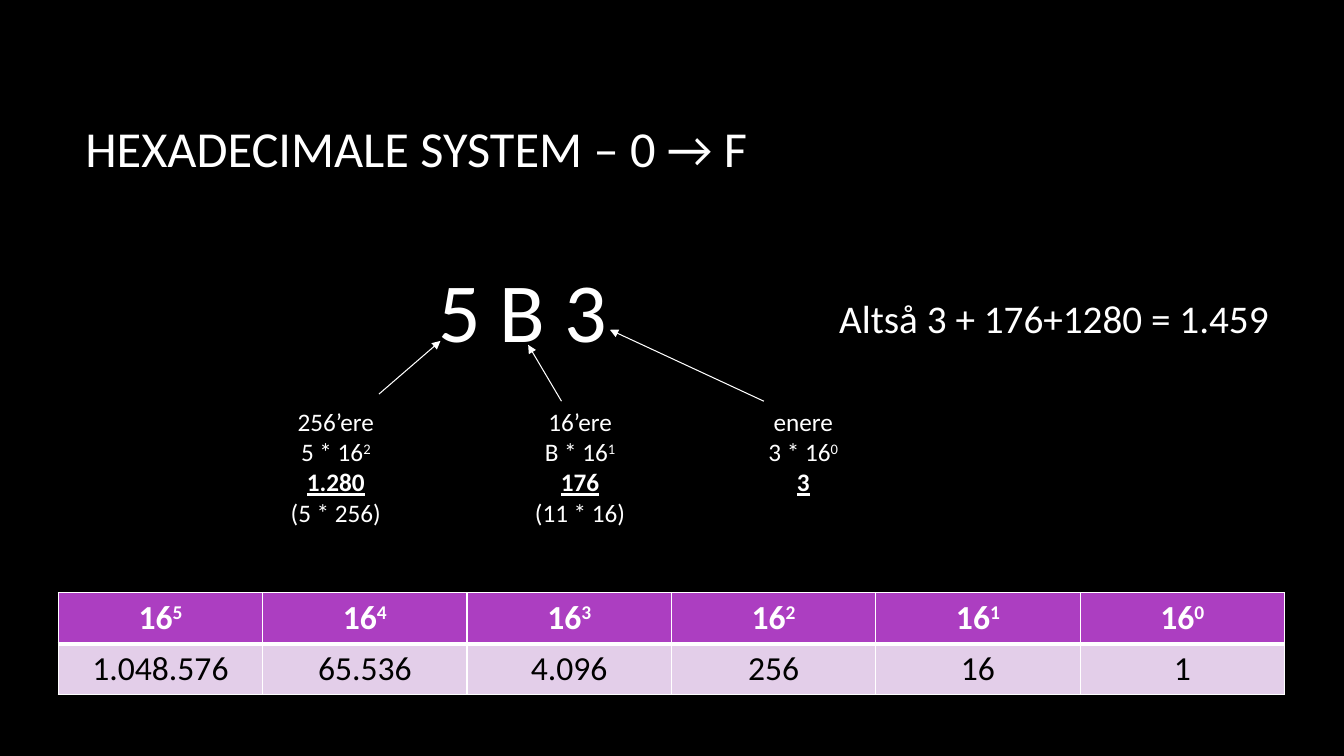
from dataclasses import dataclass

from lxml import etree
from pptx import Presentation
from pptx.dml.color import RGBColor
from pptx.enum.shapes import MSO_CONNECTOR
from pptx.enum.text import MSO_ANCHOR, PP_ALIGN
from pptx.oxml.ns import qn
from pptx.slide import Slide
from pptx.table import _Cell
from pptx.text.text import _Paragraph
from pptx.util import Cm, Pt

LEFT, CENTER = PP_ALIGN.LEFT, PP_ALIGN.CENTER
TOP, MIDDLE = MSO_ANCHOR.TOP, MSO_ANCHOR.MIDDLE
STRAIGHT = MSO_CONNECTOR.STRAIGHT

FONT = "Calibri"
COLORS = {"back": "000000", "white": "FFFFFF", "head": "AC3EC1",
          "body": "E3CEE9", "ink": "000000"}
RAISE = "30000"
TOTAL = {"bold": True, "underline": True}


@dataclass
class Label:
    left: float
    top: float
    width: float
    height: float
    size: int
    lines: list[str]
    align: PP_ALIGN = LEFT
    anchor: MSO_ANCHOR = TOP
    total: int = -1  # index of the bold, underlined line


@dataclass
class Arrow:
    x1: float
    y1: float
    x2: float
    y2: float


@dataclass
class Power:
    exp: int
    value: str


NOTE = {"top": 10.11, "size": 18, "align": CENTER, "total": 2}
LABELS = [
    Label(1.9, 1.7, 28.14, 4.04, 36, ["HEXADECIMALE SYSTEM – 0 → F"], anchor=MIDDLE),
    Label(10.8, 6.38, 5.6, 2.84, 60, ["5 B 3"]),
    Label(left=18.62, width=3.25, height=2.57,
          lines=["enere", "3 * 16^0", "3"], **NOTE),
    Label(left=12.98, width=3.28, height=3.33,
          lines=["16’ere", "B * 16^1", "176", "(11 * 16)"], **NOTE),
    Label(left=6.32, width=4.29, height=3.33,
          lines=["256’ere", "5 * 16^2", "1.280", "(5 * 256)"], **NOTE),
    Label(20.9, 7.29, 11.86, 1.45, 28, ["Altså 3 + 176+1280 = 1.459"]),
]
ARROWS = [
    Arrow(19.25, 10.11, 15.37, 8.31),
    Arrow(14.15, 10.11, 13.31, 8.69),
    Arrow(9.55, 9.93, 11.1, 8.59),
]
POWERS = [Power(5, "1.048.576"), Power(4, "65.536"), Power(3, "4.096"),
          Power(2, "256"), Power(1, "16"), Power(0, "1")]


def tint(name: str) -> RGBColor:
    return RGBColor.from_string(COLORS[name])


def write(para: _Paragraph, text: str, size: int, color: str, **extra: bool) -> None:
    """Add text to a paragraph; what follows a ^ is superscript."""
    base, _, power = text.partition("^")
    style = {"name": FONT, "size": Pt(size), **extra}
    for part in filter(None, (base, power)):
        run = para.add_run()
        run.text = part
        for key, value in style.items():
            setattr(run.font, key, value)
        run.font.color.rgb = tint(color)
    if power:
        run.font._element.set("baseline", RAISE)


def add_label(slide: Slide, label: Label) -> None:
    box = slide.shapes.add_textbox(Cm(label.left), Cm(label.top),
                                   Cm(label.width), Cm(label.height))
    frame = box.text_frame
    frame.word_wrap = True
    frame.vertical_anchor = label.anchor
    for i, line in enumerate(label.lines):
        para = frame.add_paragraph() if i else frame.paragraphs[0]
        para.alignment = label.align
        write(para, line, label.size, "white", **(TOTAL if i == label.total else {}))


def add_arrow(slide: Slide, arrow: Arrow) -> None:
    link = slide.shapes.add_connector(STRAIGHT, Cm(arrow.x1), Cm(arrow.y1),
                                      Cm(arrow.x2), Cm(arrow.y2))
    link.line.color.rgb = tint("white")
    link.line.width = Pt(0.75)
    etree.SubElement(link.line._get_or_add_ln(), qn("a:tailEnd"), type="triangle")
    etree.SubElement(link._element.spPr, qn("a:effectLst"))


def add_edges(cell: _Cell, widths: dict[str, int]) -> None:
    """Draw white borders; call before the fill is set."""
    props = cell._tc.get_or_add_tcPr()
    for side, width in widths.items():
        edge = etree.SubElement(props, qn(f"a:ln{side}"), w=str(Pt(width)))
        fill = etree.SubElement(edge, qn("a:solidFill"))
        etree.SubElement(fill, qn("a:srgbClr"), val=COLORS["white"])


def fill_cell(cell: _Cell, text: str, head: bool) -> None:
    rule = {"B": 3} if head else {"T": 3}
    add_edges(cell, {"L": 1, "R": 1, "T": 1, "B": 1} | rule)
    cell.fill.solid()
    cell.fill.fore_color.rgb = tint("head" if head else "body")
    para = cell.text_frame.paragraphs[0]
    para.alignment = CENTER
    write(para, text, 24, "white" if head else "ink", bold=head)


def add_powers(slide: Slide) -> None:
    table = slide.shapes.add_table(2, len(POWERS), Cm(1.47), Cm(14.94),
                                   Cm(30.9), Cm(2.56)).table
    for col, power in enumerate(POWERS):
        fill_cell(table.cell(0, col), f"16^{power.exp}", True)
        fill_cell(table.cell(1, col), power.value, False)


def main() -> None:
    deck = Presentation()
    deck.slide_width, deck.slide_height = Cm(33.87), Cm(19.05)
    slide = deck.slides.add_slide(deck.slide_layouts[6])
    slide.background.fill.solid()
    slide.background.fill.fore_color.rgb = tint("back")
    for label in LABELS:
        add_label(slide, label)
    for arrow in ARROWS:
        add_arrow(slide, arrow)
    add_powers(slide)
    deck.save("out.pptx")


if __name__ == "__main__":
    main()
